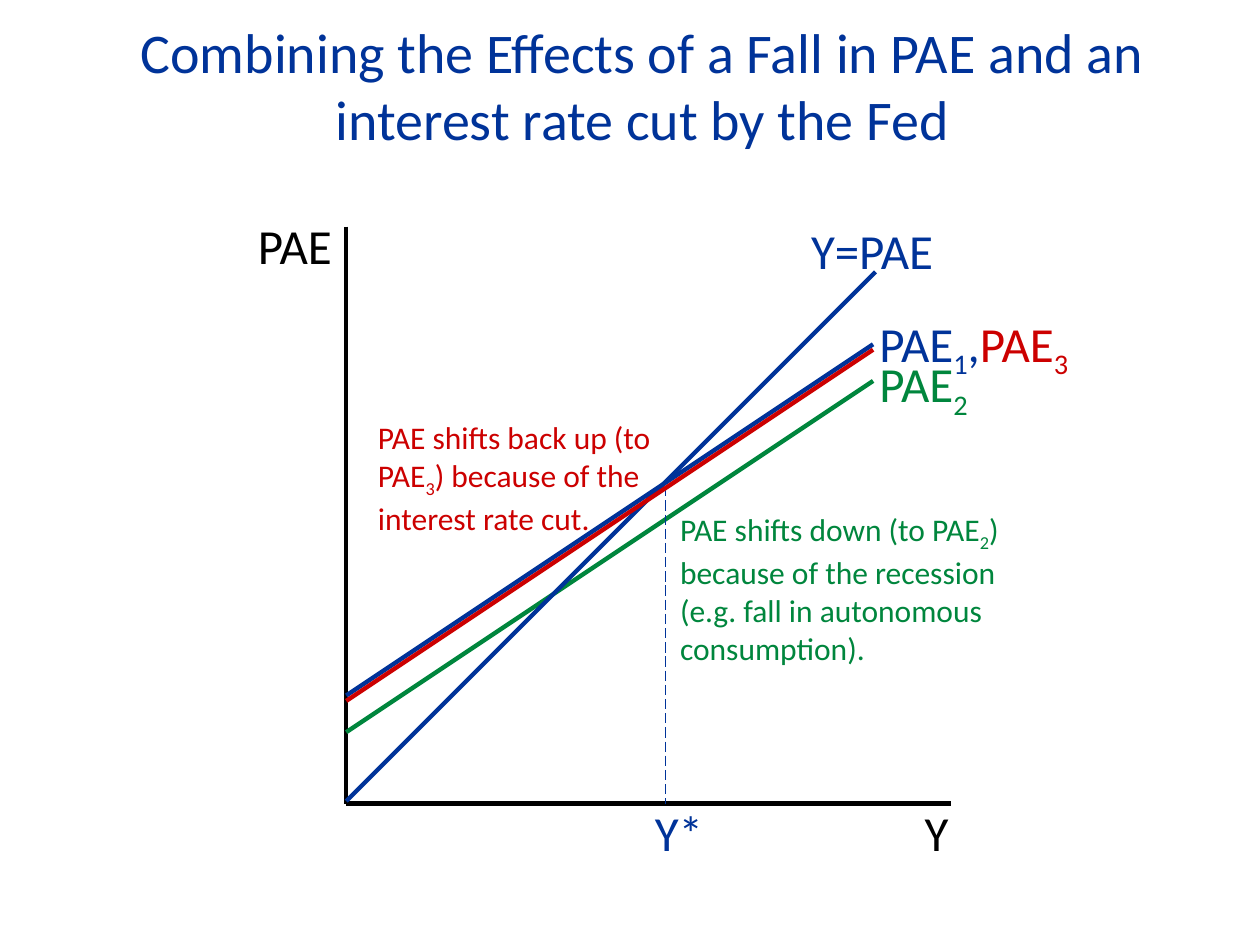
from dataclasses import dataclass

from lxml.etree import SubElement
from pptx import Presentation
from pptx.dml.color import RGBColor as RGB
from pptx.enum.dml import MSO_LINE
from pptx.enum.shapes import MSO_CONNECTOR as CONN
from pptx.enum.text import MSO_ANCHOR, PP_ALIGN
from pptx.oxml.ns import qn
from pptx.util import Cm, Pt


@dataclass(frozen=True)
class Theme:
    font: str = "Calibri"
    black: RGB = RGB(0, 0, 0)
    blue: RGB = RGB(0x00, 0x33, 0x99)
    red: RGB = RGB(0xCC, 0x00, 0x00)
    green: RGB = RGB(0x00, 0x86, 0x3D)
    title: int = 32
    label: int = 28
    note: int = 18
    thick: float = 2.5
    thin: float = 0.75


T = Theme()


def add_text(slide, box, runs, color, size):
    tb = slide.shapes.add_textbox(*(Cm(v) for v in box))
    tf = tb.text_frame
    tf.word_wrap = True
    p = tf.paragraphs[0]
    p.font.name, p.font.size = T.font, Pt(size)
    p.font.color.rgb = color
    for text, *style in runs:
        r = p.add_run()
        r.text = text
        if "sub" in style:
            r._r.get_or_add_rPr().set("baseline", "-25000")
        if T.red in style:
            r.font.color.rgb = T.red
    return tf


def add_line(slide, start, end, color, width=T.thick):
    ends = (Cm(v) for v in (*start, *end))
    ln = slide.shapes.add_connector(CONN.STRAIGHT, *ends)
    ln.line.color.rgb = color
    ln.line.width = Pt(width)
    SubElement(ln._element.spPr, qn("a:effectLst"))
    return ln


def add_title(slide, box, text):
    tf = add_text(slide, box, [(text,)], T.blue, T.title)
    tf.vertical_anchor = MSO_ANCHOR.MIDDLE
    tf.paragraphs[0].alignment = PP_ALIGN.CENTER


def add_diagram(slide, x, y, w, h):
    def line(x1, y1, x2, y2, *style):
        return add_line(slide, (x + x1, y + y1), (x + x2, y + y2), *style)

    def text(dx, dy, tw, th, *content):
        return add_text(slide, (x + dx, y + dy, tw, th), *content)

    line(0, 0, 0, h, T.black)
    line(0, h, w, h, T.black)

    run, rise, intercept = 10.62, 7.08, 9.45
    for color, drop in ((T.blue, 0), (T.green, 0.74)):
        start = intercept + drop
        line(0, start, run, start - rise, color)
    diagonal = 10.67
    line(0, h - 0.05, diagonal, h - 0.05 - diagonal, T.blue)
    guide = line(6.43, 5.23, 6.43, h, T.blue, T.thin)
    guide.line.dash_style = MSO_LINE.LONG_DASH

    labels = (
        (11.41, 11.48, 1.24, [("Y",)], T.black),
        (5.97, 11.48, 1.68, [("Y*",)], T.blue),
        (9.12, -0.25, 3.18, [("Y=PAE",)], T.blue),
        (10.5, 1.63, 5.18, [("PAE",), ("1", "sub"), (",",),
                            ("PAE", T.red), ("3", "sub", T.red)], T.blue),
        (10.5, 2.44, 2.44, [("PAE",), ("2", "sub")], T.green),
    )
    for dx, dy, tw, runs, color in labels:
        text(dx, dy, tw, 1.45, runs, color, T.label)
    axis = text(-2.03, -0.12, 2.08, 1.24, [("PAE",)], T.black, T.label)
    axis.paragraphs[0].line_spacing = 0.8

    text(6.48, 5.59, 8, 3.33,
         [("PAE shifts down (to PAE",), ("2", "sub"),
          (") because of the recession (e.g. fall in autonomous consumption).",)],
         T.green, T.note)
    text(0.39, 3.74, 6.55, 2.57,
         [("PAE shifts back up (to PAE",), ("3", "sub"),
          (") because of the interest rate cut.",)],
         T.red, T.note)
    line(0, intercept + 0.11, run, intercept + 0.11 - rise, T.red)


def main():
    prs = Presentation()
    prs.slide_width, prs.slide_height = Cm(25.4), Cm(19.05)
    slide = prs.slides.add_slide(prs.slide_layouts[6])
    add_title(slide, (2.03, 0.2, 21.84, 3),
              "Combining the Effects of a Fall in PAE and an interest rate cut by the Fed")
    add_diagram(slide, 6.98, 4.57, 12.19, 11.63)
    prs.save("out.pptx")


if __name__ == "__main__":
    main()
